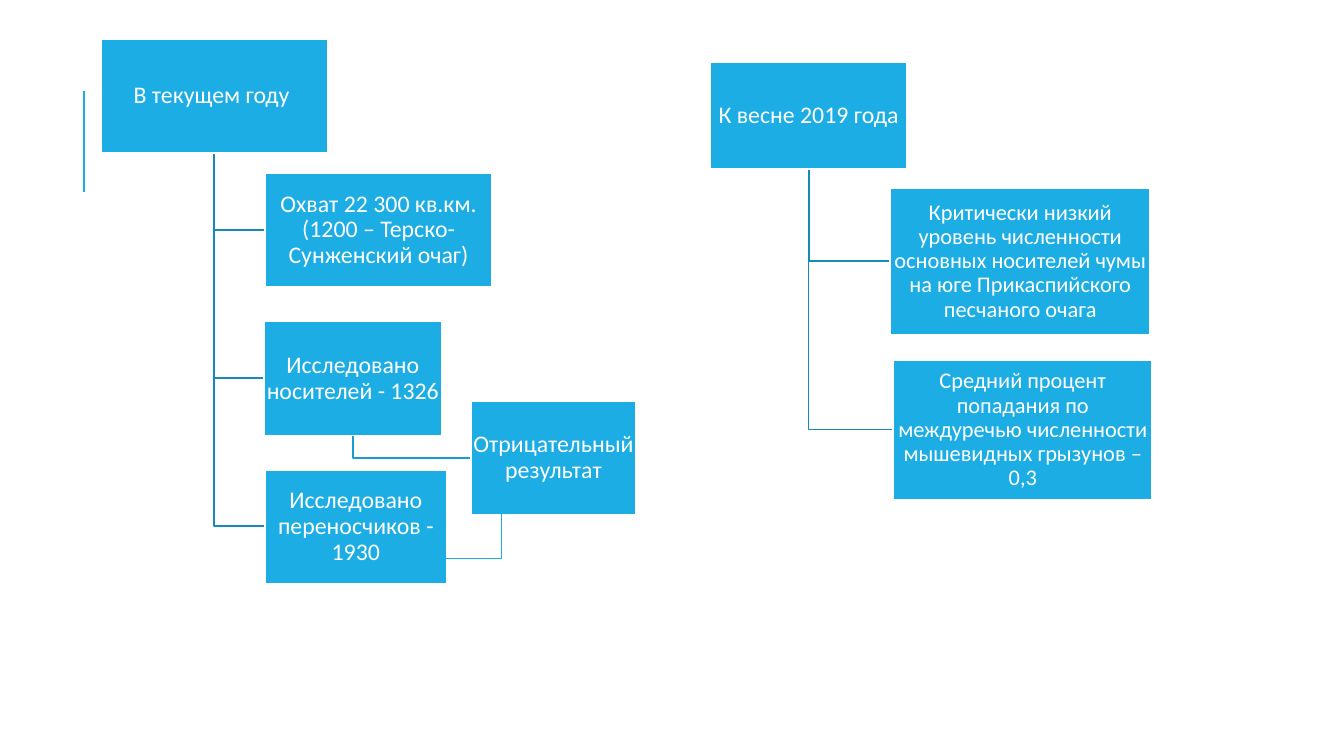
from pptx import Presentation
from pptx.dml.color import RGBColor
from pptx.enum.shapes import MSO_CONNECTOR, MSO_SHAPE
from pptx.enum.text import MSO_ANCHOR, PP_ALIGN
from pptx.oxml.ns import qn
from pptx.util import Pt
from lxml import etree

PX = 9144  # EMU per px, 100 px to the inch
STRAIGHT, ELBOW = MSO_CONNECTOR.STRAIGHT, MSO_CONNECTOR.ELBOW
RECTANGLE = MSO_SHAPE.RECTANGLE
MIDDLE, CENTER = MSO_ANCHOR.MIDDLE, PP_ALIGN.CENTER

BLUE = RGBColor(0x1C, 0xAD, 0xE4)
DARK_BLUE = RGBColor(0x16, 0x8B, 0xB7)
MID_BLUE = RGBColor(0x19, 0x9D, 0xCF)
WHITE = RGBColor(0xFF, 0xFF, 0xFF)
FONT = "Calibri"

# Boxes: left, top, width, height within the tree, text size, text
CURRENT_YEAR = {
    "root": (0, 0, 225, 113, 17, "В текущем году "),
    "coverage": (163, 133, 225, 113, 17,
                 "Охват 22 300 кв.км. (1200 – Терско-Сунженский очаг)"),
    "hosts": (162, 280, 176, 113, 17, "Исследовано носителей - 1326"),
    "vectors": (163, 427, 180, 113, 17, "Исследовано переносчиков - 1930"),
    "result": (367, 359, 164, 113, 17, "Отрицательный результат"),
}
CURRENT_YEAR_LINKS = [
    ("root", "coverage", DARK_BLUE),
    ("root", "hosts", DARK_BLUE),
    ("root", "vectors", DARK_BLUE),
    ("hosts", "result", MID_BLUE),
]
SPRING = {
    "root": (0, 0, 196, 106, 17, "К весне 2019 года"),
    "numbers": (179, 125, 258, 145, 16,
                "Критически низкий уровень численности основных носителей "
                "чумы на юге Прикаспийского песчаного очага"),
    "rodents": (182, 295, 257, 139, 16,
                "Средний процент попадания по междуречью численности "
                "мышевидных грызунов – 0,3"),
}
SPRING_LINKS = [
    ("root", "numbers", DARK_BLUE),
    ("root", "rodents", DARK_BLUE),
]


def add_line(slide, kind, start, end, width):
    points = [value * PX for value in (*start, *end)]
    connector = slide.shapes.add_connector(kind, *points)
    connector.line.color.rgb = BLUE
    connector.line.width = Pt(width)
    etree.SubElement(connector._element.spPr, qn("a:effectLst"))


def add_branch(slide, start, end, color):
    """Run down from the parent, then right to the child."""
    builder = slide.shapes.build_freeform(*start, scale=PX)
    builder.add_line_segments([(start[0], end[1]), end], close=False)
    branch = builder.convert_to_shape()
    branch.shadow.inherit = False
    branch.fill.background()
    branch.line.color.rgb = color
    branch.line.width = Pt(1.25)


def add_box(slide, left, top, width, height, size, text):
    box = slide.shapes.add_shape(
        RECTANGLE, left * PX, top * PX, width * PX, height * PX)
    box.shadow.inherit = False
    box.fill.solid()
    box.fill.fore_color.rgb = BLUE
    box.line.color.rgb = WHITE
    box.line.width = Pt(1.25)

    frame = box.text_frame
    frame.word_wrap = True
    frame.vertical_anchor = MIDDLE
    frame.margin_left = frame.margin_right = PX
    frame.margin_top = frame.margin_bottom = PX
    paragraph = frame.paragraphs[0]
    paragraph.alignment = CENTER
    paragraph.line_spacing = 0.9
    run = paragraph.add_run()
    run.text = text
    run.font.name = FONT
    run.font.size = Pt(size)
    run.font.color.rgb = WHITE


def add_tree(slide, left, top, boxes, links):
    # Branches lie behind the boxes
    for parent, child, color in links:
        parent_x, parent_y, parent_width, parent_height = boxes[parent][:4]
        child_x, child_y, _, child_height = boxes[child][:4]
        start = (left + parent_x + parent_width // 2,
                 top + parent_y + parent_height)
        end = (left + child_x, top + child_y + child_height // 2)
        add_branch(slide, start, end, color)
    for x, y, *rest in boxes.values():
        add_box(slide, left + x, top + y, *rest)


def main():
    presentation = Presentation()
    presentation.slide_width = 1333 * PX
    presentation.slide_height = 750 * PX
    slide = presentation.slides.add_slide(presentation.slide_layouts[6])

    # Accent line at the left edge
    add_line(slide, STRAIGHT, (83, 190), (83, 90), 1.5)

    # The two trees
    add_tree(slide, 100, 39, CURRENT_YEAR, CURRENT_YEAR_LINKS)
    add_tree(slide, 704, 62, SPRING, SPRING_LINKS)

    # Link between the result and the vectors
    add_line(slide, ELBOW, (587, 486), (407, 554), 0.75)

    presentation.save("out.pptx")


if __name__ == "__main__":
    main()
